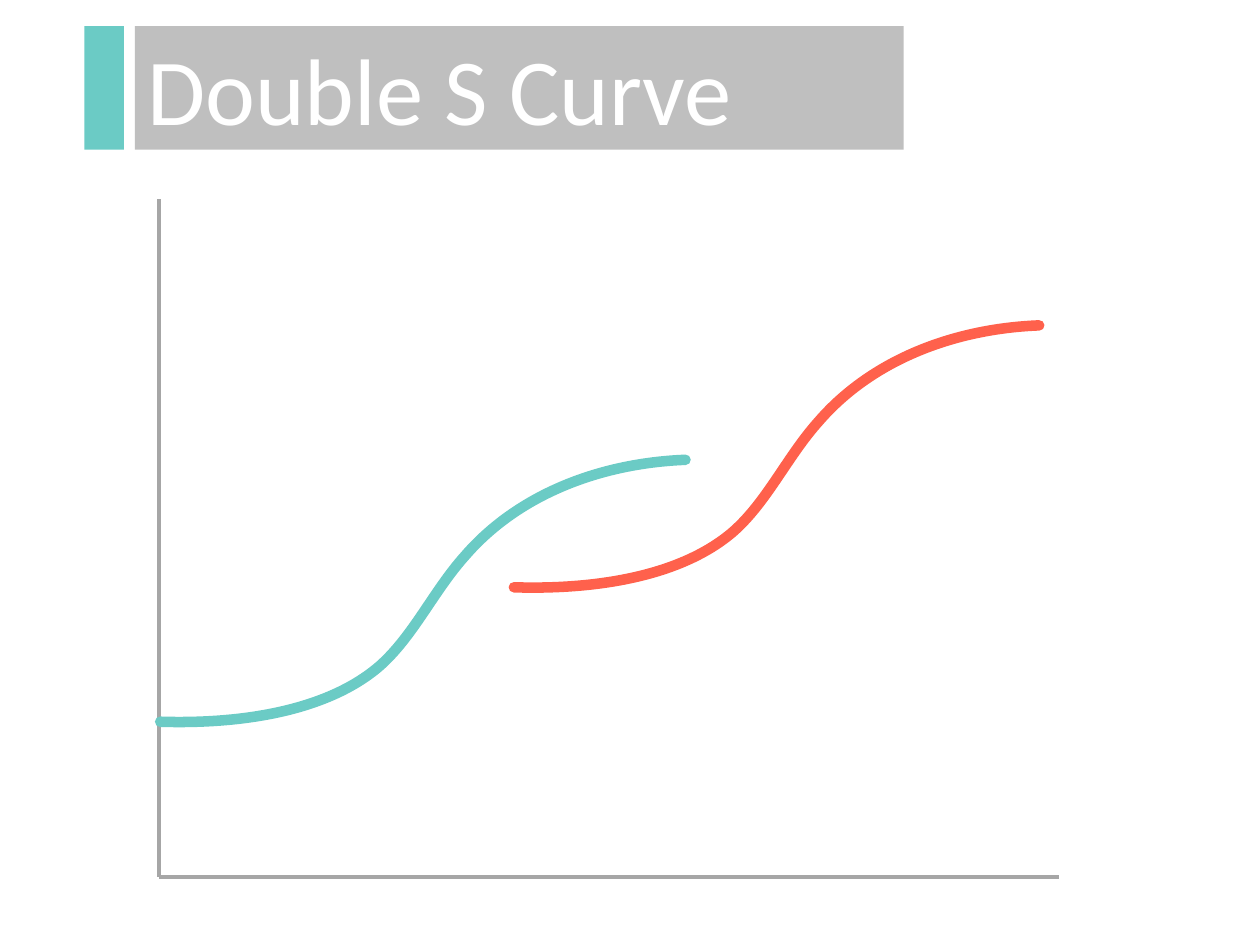
from dataclasses import dataclass

from pptx import Presentation
from pptx.dml.color import RGBColor
from pptx.enum.shapes import MSO_CONNECTOR as Connector, MSO_SHAPE as Shape
from pptx.enum.text import MSO_ANCHOR as Anchor, PP_ALIGN as Align
from pptx.oxml.ns import qn
from pptx.util import Cm, Pt


@dataclass(frozen=True)
class Theme:
    teal: RGBColor = RGBColor.from_string("6BCBC5")
    coral: RGBColor = RGBColor.from_string("FF614C")
    band: RGBColor = RGBColor.from_string("BFBFBF")
    axis: RGBColor = RGBColor.from_string("A6A6A6")
    white: RGBColor = RGBColor.from_string("FFFFFF")
    font: str = "Calibri"
    title_size: Pt = Pt(54)
    axis_width: Pt = Pt(2)
    curve_width: Pt = Pt(6)


THEME = Theme()

# Start, then three Bezier points per segment, in cm from the start of the curve
S_CURVE = [
    (0, 0),
    (1.6, 0.05), (3.35, -0.2), (4.42, -1.12),
    (5.11, -1.73), (5.51, -2.64), (6.15, -3.35),
    (7.19, -4.55), (8.81, -5.21), (10.59, -5.28),
]


def add_bar(page, left, width, color):
    bar = page.shapes.add_shape(
        Shape.RECTANGLE, Cm(left), Cm(0.53), Cm(width), Cm(2.49))
    bar.shadow.inherit = False
    bar.fill.solid()
    bar.fill.fore_color.rgb = color
    bar.line.fill.background()
    return bar


def write_title(box, text):
    frame = box.text_frame
    frame.text = text
    frame.word_wrap = True
    frame.vertical_anchor = Anchor.MIDDLE
    para = frame.paragraphs[0]
    para.alignment = Align.LEFT
    font = para.runs[0].font
    font.name = THEME.font
    font.size = THEME.title_size
    font.color.rgb = THEME.white


def add_axis(page, start, end):
    axis = page.shapes.add_connector(
        Connector.STRAIGHT, *(Cm(value) for value in (*start, *end)))
    axis.line.color.rgb = THEME.axis
    axis.line.width = THEME.axis_width
    properties = axis.element.spPr
    properties.append(properties.makeelement(qn("a:effectLst")))


def add_s_curve(page, left, top, color):
    points = [(Cm(left + x), Cm(top + y)) for x, y in S_CURVE]
    builder = page.shapes.build_freeform(*points[0])
    builder.add_line_segments(points[1:], close=False)
    curve = builder.convert_to_shape()
    curve.shadow.inherit = False
    curve.fill.background()
    curve.line.color.rgb = color
    curve.line.width = THEME.curve_width
    curve.element.spPr.find(qn("a:ln")).set("cap", "rnd")

    # Merge every three straight segments into one Bezier segment
    segments = list(curve.element.iter(qn("a:lnTo")))
    for first in range(0, len(segments), 3):
        bezier, *others = segments[first:first + 3]
        bezier.tag = qn("a:cubicBezTo")
        for segment in others:
            bezier.append(segment[0])
            segment.getparent().remove(segment)


def main():
    deck = Presentation()
    deck.slide_width, deck.slide_height = Cm(25.4), Cm(19.05)
    page = deck.slides.add_slide(deck.slide_layouts[6])

    # Title
    add_bar(page, 1.7, 0.8, THEME.teal)
    write_title(add_bar(page, 2.72, 15.5, THEME.band), "Double S Curve")

    # Axes
    origin = (3.2, 17.68)
    add_axis(page, (3.2, 4.02), origin)
    add_axis(page, (21.34, 17.68), origin)

    # Curves
    add_s_curve(page, 3.23, 14.55, THEME.teal)
    add_s_curve(page, 10.36, 11.84, THEME.coral)

    deck.save("out.pptx")


if __name__ == "__main__":
    main()
